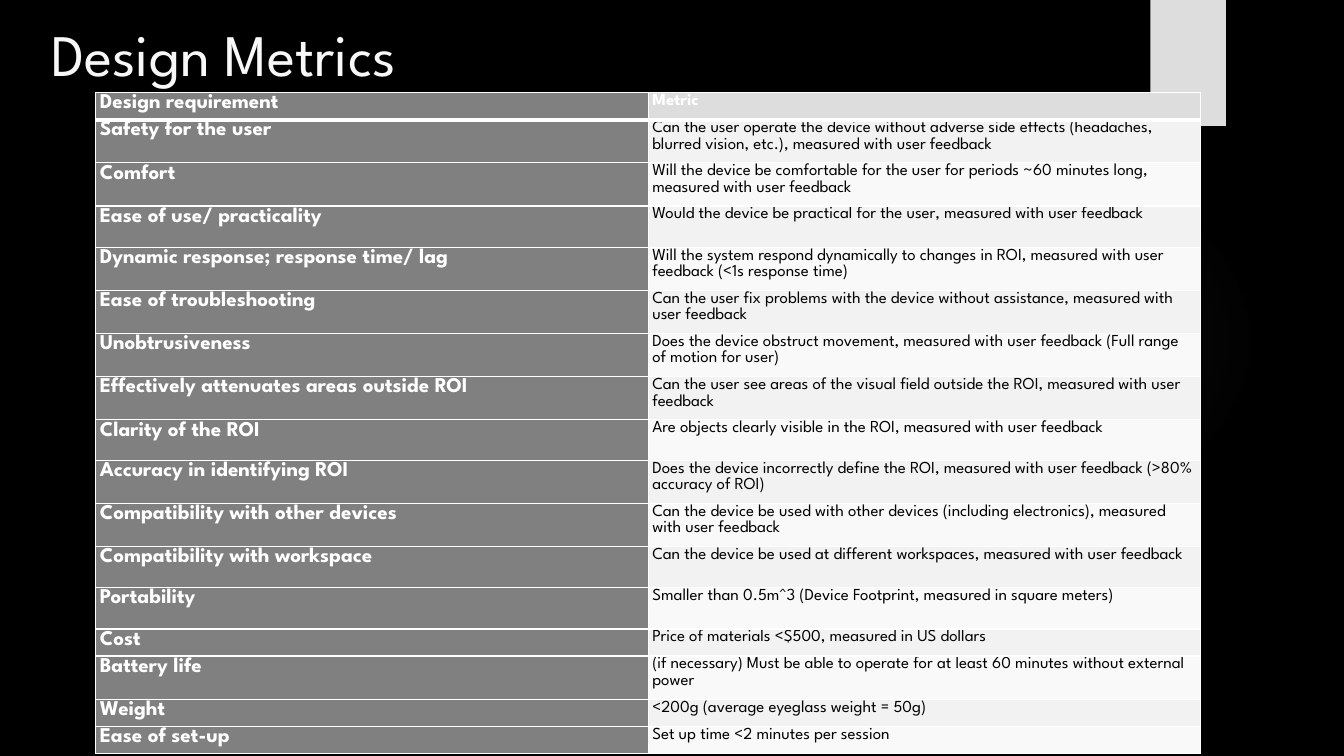
from lxml.etree import SubElement
from pptx import Presentation
from pptx.dml.color import RGBColor
from pptx.enum.shapes import MSO_SHAPE
from pptx.oxml import parse_xml
from pptx.oxml.ns import nsdecls, qn
from pptx.util import Inches, Pt

FONT = "League Spartan"
WHITE = "FFFFFF"
GRAY = "808080"
LIGHT = "DDDDDD"
BANDS = ("F2F2F2", "F9F9F9")
HEADER = ("Design requirement", "Metric")
SHORT_ROW, TALL_ROW = 0.26, 0.41

METRICS = [
    ("Safety for the user", "Can the user operate the device without adverse side effects (headaches, blurred vision, etc.), measured with user feedback", TALL_ROW),
    ("Comfort", "Will the device be comfortable for the user for periods ~60 minutes long, measured with user feedback", TALL_ROW),
    ("Ease of use/ practicality", "Would the device be practical for the user, measured with user feedback", TALL_ROW),
    ("Dynamic response; response time/ lag", "Will the system respond dynamically to changes in ROI, measured with user feedback (<1s response time)", TALL_ROW),
    ("Ease of troubleshooting", "Can the user fix problems with the device without assistance, measured with user feedback", TALL_ROW),
    ("Unobtrusiveness", "Does the device obstruct movement, measured with user feedback (Full range of motion for user)", TALL_ROW),
    ("Effectively attenuates areas outside ROI", "Can the user see areas of the visual field outside the ROI, measured with user feedback", TALL_ROW),
    ("Clarity of the ROI", "Are objects clearly visible in the ROI, measured with user feedback", 0.4),
    ("Accuracy in identifying ROI", "Does the device incorrectly define the ROI, measured with user feedback (>80% accuracy of ROI)", TALL_ROW),
    ("Compatibility with other devices", "Can the device be used with other devices (including electronics), measured with user feedback", TALL_ROW),
    ("Compatibility with workspace", "Can the device be used at different workspaces, measured with user feedback", TALL_ROW),
    ("Portability", "Smaller than 0.5m^3 (Device Footprint, measured in square meters)", TALL_ROW),
    ("Cost", "Price of materials <$500, measured in US dollars", SHORT_ROW),
    ("Battery life", "(if necessary) Must be able to operate for at least 60 minutes without external power", TALL_ROW),
    ("Weight", "<200g (average eyeglass weight = 50g)", SHORT_ROW),
    ("Ease of set-up", "Set up time <2 minutes per session", SHORT_ROW),
]


def set_fill(fill, color):
    fill.solid()
    fill.fore_color.rgb = RGBColor.from_string(color)


def write_text(text_frame, text, size, color, bold=False, line_spacing=None):
    text_frame.word_wrap = True
    paragraph = text_frame.paragraphs[0]
    paragraph.line_spacing = line_spacing
    run = paragraph.add_run()
    run.text = text
    run.font.name = FONT
    run.font.size = Pt(size)
    run.font.bold = bold
    run.font.color.rgb = RGBColor.from_string(color)


def add_plain_shape(slide, kind, left, top, width, height, color):
    shape = slide.shapes.add_shape(kind, Inches(left), Inches(top), Inches(width), Inches(height))
    shape.shadow.inherit = False
    set_fill(shape.fill, color)
    shape.line.fill.background()
    return shape


def add_glow(slide):
    glow = add_plain_shape(slide, MSO_SHAPE.OVAL, 9.41, 1.83, 3.08, 3.08, "666666")
    stops = "".join(
        f'<a:gs pos="{position * 1000}"><a:srgbClr val="666666">'
        f'<a:alpha val="{opacity * 1000}"/></a:srgbClr></a:gs>'
        for position, opacity in ((0, 7), (36, 6), (69, 0), (100, 0))
    )
    gradient = parse_xml(
        f'<a:gradFill {nsdecls("a")}><a:gsLst>{stops}</a:gsLst><a:path path="circle">'
        '<a:fillToRect l="50000" t="50000" r="50000" b="50000"/></a:path></a:gradFill>'
    )
    properties = glow.element.spPr
    properties.replace(properties.find(qn("a:solidFill")), gradient)


def add_title(slide, text):
    box = slide.shapes.add_textbox(Inches(0.41), Inches(0.14), Inches(10.29), Inches(1.53))
    box.text_frame.margin_top = Inches(0.04)
    write_text(box.text_frame, text, size=42, color="F8F8F8")


def set_borders(cell, top, bottom):
    properties = cell._tc.get_or_add_tcPr()
    for side, width in (("L", 1), ("R", 1), ("T", top), ("B", bottom)):
        line = SubElement(properties, qn(f"a:ln{side}"), w=str(Pt(width)))
        solid = SubElement(line, qn("a:solidFill"))
        SubElement(solid, qn("a:srgbClr"), val=WHITE)


def fill_cell(cell, text, fill, top=1, bottom=1, **text_format):
    cell.margin_left = cell.margin_right = Inches(0.04)
    cell.margin_top = cell.margin_bottom = 0
    set_borders(cell, top, bottom)
    set_fill(cell.fill, fill)
    write_text(cell.text_frame, text, line_spacing=1.07, **text_format)


def add_metrics_table(slide):
    heights = [SHORT_ROW] + [height for _, _, height in METRICS]
    frame = slide.shapes.add_table(
        len(heights), 2, Inches(0.95), Inches(0.92), Inches(10.96), Inches(sum(heights))
    )
    table = frame.table
    for column in table.columns:
        column.width = Inches(5.48)
    for row, height in zip(table.rows, heights):
        row.height = Inches(height)
    fill_cell(table.cell(0, 0), HEADER[0], GRAY, bottom=3, size=15, color=WHITE, bold=True)
    fill_cell(table.cell(0, 1), HEADER[1], LIGHT, bottom=3, size=12, color=WHITE, bold=True)
    for index, (requirement, metric, _) in enumerate(METRICS):
        top = 3 if index == 0 else 1
        row = index + 1
        fill_cell(table.cell(row, 0), requirement, GRAY, top=top, size=15, color=WHITE, bold=True)
        fill_cell(table.cell(row, 1), metric, BANDS[index % 2], top=top, size=12, color="000000")


def main():
    presentation = Presentation()
    presentation.slide_width = Inches(13.33)
    presentation.slide_height = Inches(7.5)
    slide = presentation.slides.add_slide(presentation.slide_layouts[6])
    set_fill(slide.background.fill, "000000")
    add_glow(slide)
    add_plain_shape(slide, MSO_SHAPE.RECTANGLE, 11.41, 0, 0.75, 1.25, LIGHT)
    add_title(slide, "Design Metrics")
    add_metrics_table(slide)
    presentation.save("out.pptx")


if __name__ == "__main__":
    main()
